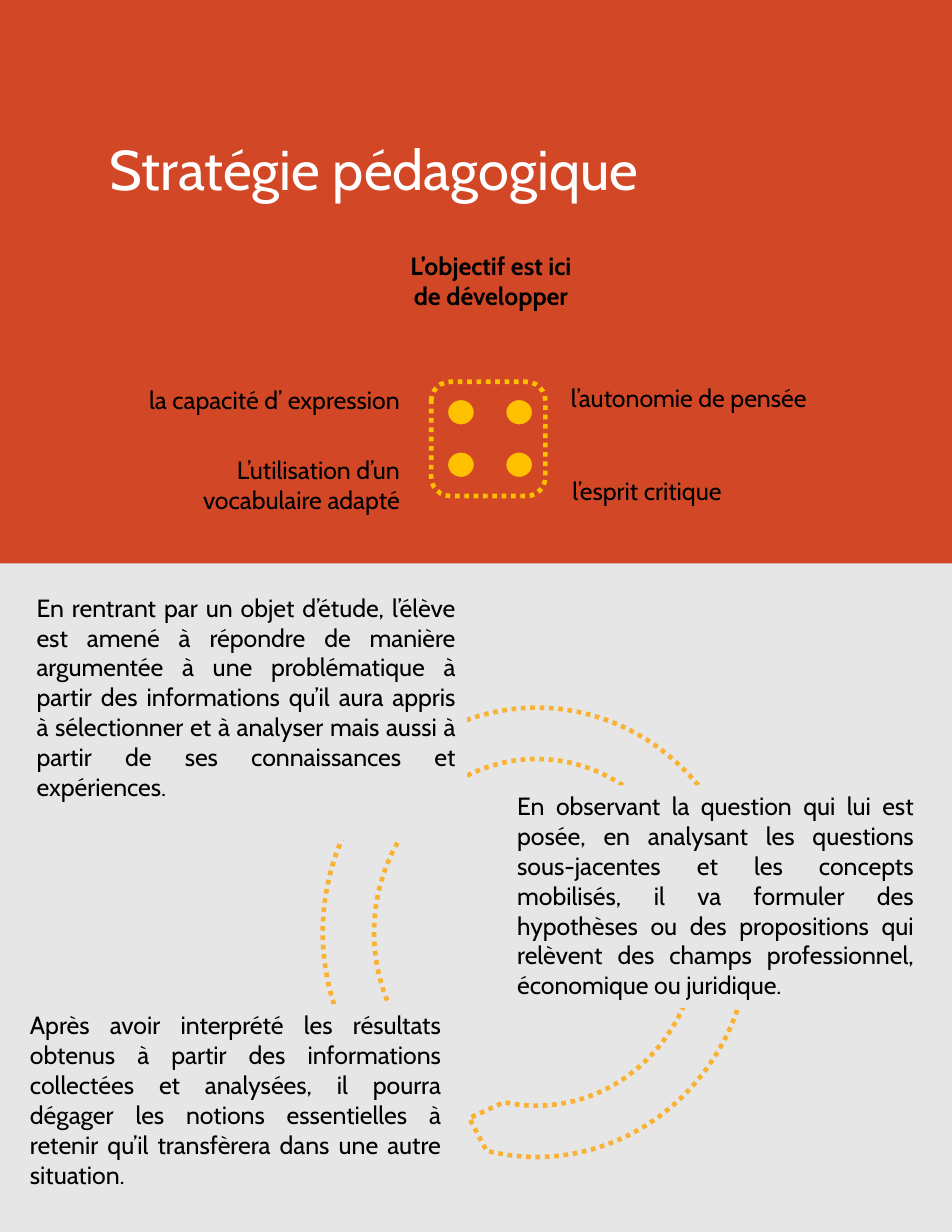
from pptx import Presentation
from pptx.dml.color import RGBColor
from pptx.enum.dml import MSO_LINE
from pptx.enum.shapes import MSO_SHAPE as SHAPE
from pptx.enum.text import MSO_ANCHOR as ANCHOR, MSO_AUTO_SIZE as FIT, PP_ALIGN as ALIGN
from pptx.util import Cm, Pt

FONT = "Cabin"
ORANGE_RED = RGBColor(0xD2, 0x47, 0x26)
BAND_GREY = RGBColor(0xE7, 0xE6, 0xE6)
BOX_GREY = RGBColor(0xE6, 0xE6, 0xE6)
AMBER = RGBColor(0xF9, 0xB2, 0x33)
YELLOW = RGBColor(0xFF, 0xC0, 0x00)
BLACK = RGBColor(0, 0, 0)
WHITE = RGBColor(0xFF, 0xFF, 0xFF)

TITLE = "Stratégie pédagogique"
STEPS = [
    ("En rentrant par un objet d’étude, l’élève est amené à répondre de manière "
     "argumentée à une problématique à partir des informations qu’il aura appris "
     "à sélectionner et à analyser mais aussi à partir de ses connaissances et "
     "expériences.", (0.58, 13.31, 10.01, 5.74)),
    ("En observant la question qui lui est posée, en analysant les questions "
     "sous-jacentes et les concepts mobilisés, il va formuler des hypothèses ou "
     "des propositions qui relèvent des champs professionnel, économique ou "
     "juridique.", (11.48, 17.81, 9.5, 5.05)),
    ("Après avoir interprété les résultats obtenus à partir des informations "
     "collectées et analysées, il pourra dégager les notions essentielles à "
     "retenir qu’il transfèrera dans une autre situation.",
     (0.43, 22.78, 9.83, 4.37)),
]
GOALS = [
    ("L’objectif est ici\nde développer", (8.66, 5.56, 4.95, 1.63), ALIGN.CENTER, True, False),
    ("la capacité d’ expression", (2.59, 8.61, 6.73, 0.94), ALIGN.RIGHT, False, False),
    ("l’autonomie de pensée", (12.7, 8.56, 6.4, 0.94), ALIGN.LEFT, False, False),
    ("l’esprit critique", (12.73, 10.67, 4.32, 0.94), ALIGN.LEFT, False, False),
    ("L’utilisation d’un vocabulaire adapté", (3.73, 10.19, 5.59, 1.63), ALIGN.RIGHT, False, True),
]
ARROW_BEND = (0.12, 4.77, 61.18, 87.33, 0.06)
DOT_COLUMNS = (10.11, 11.43)
DOT_ROWS = (9.02, 10.21)


def add_figure(kind, place, fill=None, line=None, dash=None):
    figure = slide.shapes.add_shape(kind, *map(Cm, place))
    figure.shadow.inherit = False
    if fill is None:
        figure.fill.background()
    else:
        figure.fill.solid()
        figure.fill.fore_color.rgb = fill
    if line is None:
        figure.line.fill.background()
    else:
        figure.line.color.rgb = line
        figure.line.width = Pt(3)
        if dash is not None:
            figure.line.dash_style = dash
    return figure


def write(holder, text, align, size=16, color=BLACK, bold=False, wrap=True):
    frame = holder.text_frame
    frame.text = text
    frame.word_wrap = wrap
    frame.auto_size = FIT.NONE
    frame.vertical_anchor = ANCHOR.TOP
    for paragraph in frame.paragraphs:
        paragraph.alignment = align
        paragraph.line_spacing = 1.0
        for run in paragraph.runs:
            run.font.name = FONT
            run.font.size = Pt(size)
            run.font.bold = bold
            run.font.color.rgb = color


deck = Presentation()
deck.slide_width, deck.slide_height = Cm(21.59), Cm(27.94)
slide = deck.slides.add_slide(deck.slide_layouts[5])
slide.background.fill.solid()
slide.background.fill.fore_color.rgb = ORANGE_RED

title = slide.shapes.title
title.left, title.top, title.width, title.height = map(Cm, (2.24, 2.92, 16.71, 1.8))
write(title, TITLE, ALIGN.LEFT, size=36, color=WHITE)

add_figure(SHAPE.RECTANGLE, (-0.94, 12.78, 22.91, 15.16), fill=BAND_GREY)
cycle = add_figure(SHAPE.CIRCULAR_ARROW, (7.32, 16.05, 9.7, 10.19),
                   line=AMBER, dash=MSO_LINE.ROUND_DOT)
for index, bend in enumerate(ARROW_BEND):
    cycle.adjustments[index] = bend

for text, place in STEPS:
    write(add_figure(SHAPE.RECTANGLE, place, fill=BOX_GREY), text, ALIGN.JUSTIFY)

for text, place, align, bold, wrap in GOALS:
    goal = slide.shapes.add_textbox(*map(Cm, place))
    write(goal, text, align, bold=bold, wrap=wrap)

for left in DOT_COLUMNS:
    for top in DOT_ROWS:
        add_figure(SHAPE.OVAL, (left, top, 0.69, 0.66), fill=YELLOW, line=ORANGE_RED)
add_figure(SHAPE.ROUNDED_RECTANGLE, (9.78, 8.66, 2.59, 2.59),
           line=YELLOW, dash=MSO_LINE.ROUND_DOT)

deck.save("out.pptx")
